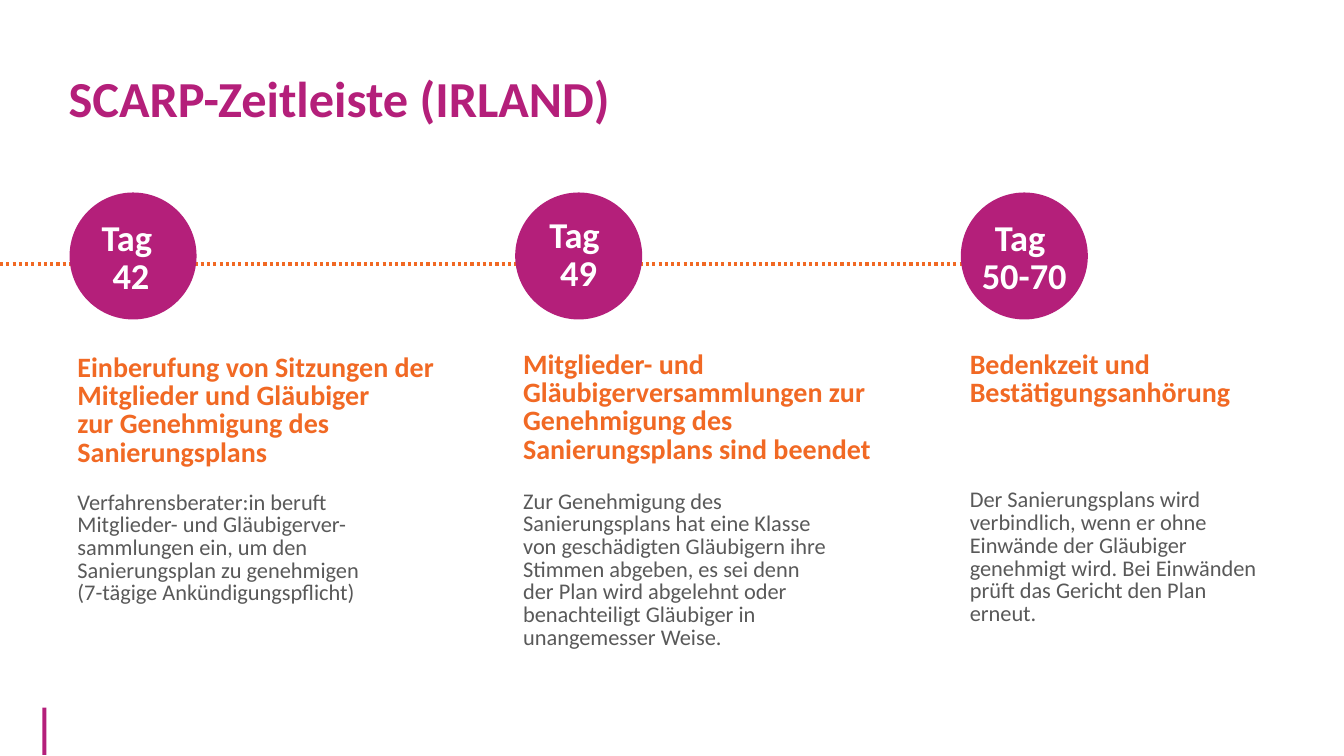
from lxml import etree
from pptx import Presentation
from pptx.dml.color import RGBColor
from pptx.enum.dml import MSO_LINE
from pptx.enum.shapes import MSO_CONNECTOR, MSO_SHAPE
from pptx.enum.text import MSO_ANCHOR, MSO_AUTO_SIZE, PP_ALIGN
from pptx.oxml.ns import qn
from pptx.util import Inches, Pt

CENTER, LEFT = PP_ALIGN.CENTER, PP_ALIGN.LEFT
MIDDLE = MSO_ANCHOR.MIDDLE
GROW, FIXED = MSO_AUTO_SIZE.SHAPE_TO_FIT_TEXT, MSO_AUTO_SIZE.NONE
OVAL, RECTANGLE = MSO_SHAPE.OVAL, MSO_SHAPE.RECTANGLE
DOTTED = MSO_LINE.ROUND_DOT
STRAIGHT = MSO_CONNECTOR.STRAIGHT
TITLE_ONLY = 5

COLORS = {"magenta": "B41F7A", "orange": "F16924", "grey": "595959", "white": "FFFFFF"}
STYLES = {
    "title": {"size": 36, "bold": True, "color": "magenta", "spacing": 0.8, "align": LEFT},
    "day": {"size": 26, "bold": True, "color": "white", "spacing": Pt(27.2), "align": CENTER},
    "heading": {"size": 20, "bold": True, "color": "orange", "spacing": Pt(20.2), "align": LEFT},
    "body": {"size": 16, "bold": False, "color": "grey", "spacing": Pt(16.2), "align": LEFT},
}
CIRCLE_SIZE, CIRCLE_TOP = 1.26, 1.91
FIRST_CIRCLE_LEFT, STEP_PITCH = 0.69, 4.42

STEPS = [
    {
        "day": ((0.67, 2.14, 1.26, 0.86), ["Tag ", "42"]),
        "heading": ((0.67, 3.47, 3.83, 1.23), [
            "Einberufung von Sitzungen der",
            "Mitglieder und Gläubiger",
            "zur Genehmigung des Sanierungsplans",
        ]),
        "body": ((0.67, 4.83, 3.68, 1.45), [
            "Verfahrensberater:in beruft Mitglieder- und Gläubigerver-sammlungen ein, "
            "um den Sanierungsplan zu genehmigen",
            "(7-tägige Ankündigungspflicht)",
        ]),
    },
    {
        "day": ((5.11, 2.11, 1.26, 0.86), ["Tag ", "49"]),
        "heading": ((5.09, 3.44, 3.73, 1.23), [
            "Mitglieder- und Gläubigerversammlungen zur Genehmigung des "
            "Sanierungsplans sind beendet",
        ]),
        "body": ((5.09, 4.82, 3.29, 1.9), [
            "Zur Genehmigung des Sanierungsplans hat eine Klasse von geschädigten "
            "Gläubigern ihre Stimmen abgeben, es sei denn der Plan wird abgelehnt oder "
            "benachteiligt Gläubiger in unangemesser Weise.",
        ]),
    },
    {
        "day": ((9.53, 2.14, 1.26, 0.86), ["Tag ", "50-70"]),
        "heading": ((9.52, 3.44, 3.83, 0.67), ["Bedenkzeit und", "Bestätigungsanhörung"]),
        "body": ((9.52, 4.81, 3.15, 1.67), [
            "Der Sanierungsplans wird verbindlich, wenn er ohne Einwände der Gläubiger "
            "genehmigt wird. Bei Einwänden prüft das Gericht den Plan erneut.",
        ]),
    },
]


def write_text(shape, lines, style, auto_size):
    frame = shape.text_frame
    frame.word_wrap = True
    frame.auto_size = auto_size
    frame.text = "\n".join(lines)
    for paragraph in frame.paragraphs:
        paragraph.alignment = style["align"]
        paragraph.line_spacing = style["spacing"]
        paragraph.space_before = Pt(0)
        values = {"name": "Calibri", "size": Pt(style["size"]), "bold": style["bold"]}
        for run in paragraph.runs:
            for name, value in values.items():
                setattr(run.font, name, value)
            run.font.color.rgb = RGBColor.from_string(COLORS[style["color"]])


def add_magenta_shape(shapes, kind, left, top, width, height):
    shape = shapes.add_shape(kind, Inches(left), Inches(top), Inches(width), Inches(height))
    shape.shadow.inherit = False
    shape.fill.solid()
    shape.fill.fore_color.rgb = RGBColor.from_string(COLORS["magenta"])
    shape.line.fill.background()


presentation = Presentation()
presentation.slide_width = Inches(13.33)
presentation.slide_height = Inches(7.5)
slide = presentation.slides.add_slide(presentation.slide_layouts[TITLE_ONLY])

title = slide.shapes.title
title.left, title.top = Inches(0.58), Inches(0.7)
title.width, title.height = Inches(8.8), Inches(0.64)
title.text_frame.vertical_anchor = MIDDLE
write_text(title, ["SCARP-Zeitleiste (IRLAND)"], STYLES["title"], FIXED)

add_magenta_shape(slide.shapes, RECTANGLE, 0.42, 7.02, 0.04, 0.47)

timeline = slide.shapes.add_connector(
    STRAIGHT, Inches(0), Inches(2.62), Inches(10.24), Inches(2.62))
timeline.line.color.rgb = RGBColor.from_string(COLORS["orange"])
timeline.line.width = Pt(2.25)
timeline.line.dash_style = DOTTED
etree.SubElement(timeline._element.spPr, qn("a:effectLst"))

for index, step in enumerate(STEPS):
    group = slide.shapes.add_group_shape()
    circle_left = FIRST_CIRCLE_LEFT + index * STEP_PITCH
    add_magenta_shape(group.shapes, OVAL, circle_left, CIRCLE_TOP, CIRCLE_SIZE, CIRCLE_SIZE)
    for part, (position, lines) in step.items():
        text_box = group.shapes.add_textbox(*[Inches(value) for value in position])
        write_text(text_box, lines, STYLES[part], GROW)

presentation.save("out.pptx")
